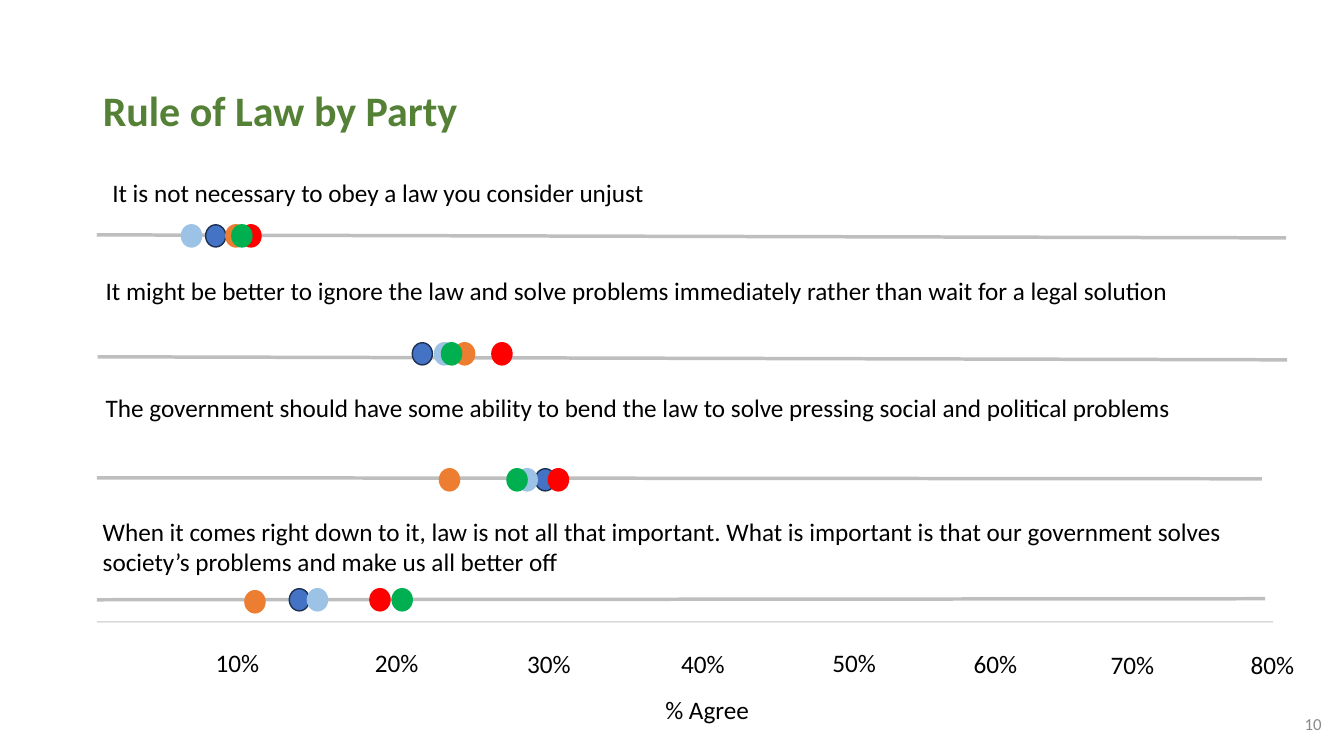
"""Build the Rule of Law by Party dot-plot slide."""
from dataclasses import dataclass

import lxml.etree
import pptx
import pptx.dml.color
import pptx.enum.shapes
import pptx.enum.text
import pptx.oxml.ns
import pptx.util

Pt = pptx.util.Pt
RGBColor = pptx.dml.color.RGBColor
ALIGN = pptx.enum.text.PP_ALIGN
ANCHOR = pptx.enum.text.MSO_ANCHOR

TITLE_GREEN = RGBColor(0x54, 0x81, 0x35)
BLACK = RGBColor(0, 0, 0)
NUMBER_GRAY = RGBColor(0x88, 0x88, 0x88)
LINE_GRAY = RGBColor(0x7F, 0x7F, 0x7F)
BLUE = RGBColor(0x44, 0x72, 0xC4)
NAVY = RGBColor(0x1C, 0x30, 0x52)
RED = RGBColor(0xFF, 0, 0)
ORANGE = RGBColor(0xED, 0x7D, 0x31)
LIGHT_BLUE = RGBColor(0x9C, 0xC2, 0xE5)
GREEN = RGBColor(0, 0xB0, 0x50)

FONT = "Calibri"
PARTIES = [(BLUE, NAVY), (RED, RED), (ORANGE, ORANGE), (LIGHT_BLUE, LIGHT_BLUE), (GREEN, GREEN)]
DOT_WIDTH, DOT_HEIGHT = 14.4, 15.84


@dataclass
class Row:
    """One statement, its scale line and the dots in party order."""
    box: tuple
    statement: str
    line: tuple
    dot_top: float
    dot_lefts: tuple
    orange_drop: float = 0


ROWS = [
    Row((69.12, 123.12, 614.88, 28.8),
        " It is not necessary to obey a law you consider unjust",
        (0, 44.64, 849.6, 46.8), 37.44, (77.76, 102.96, 92.16, 60.48, 96.48)),
    Row((68.4, 192.96, 849.6, 28.8),
        "It might be better to ignore the law and solve problems immediately "
        "rather than wait for a legal solution",
        (1.44, 61.92, 851.04, 64.08), 51.84, (226.08, 282.96, 256.32, 241.92, 246.96)),
    Row((68.4, 276.48, 849.6, 51.12),
        "The government should have some ability to bend the law to solve "
        "pressing social and political problems",
        (0.72, 64.8, 833.04, 65.52), 58.32, (313.92, 323.28, 245.52, 300.96, 293.76)),
    Row((66.24, 365.04, 834.48, 51.12),
        "When it comes right down to it, law is not all that important. What is "
        "important is that our government solves society’s problems and make us all better off",
        (2.88, 63.36, 837.36, 62.64), 55.44, (140.4, 198, 108.72, 153.36, 213.84), 1.44),
]
TICKS = [(77.76, 14.4), (191.52, 14.4), (300.24, 15.12), (410.4, 15.12),
         (518.4, 14.4), (619.2, 15.12), (717.12, 15.84), (817.2, 15.84)]


def format_text(shape, text, size, color, align=None, bold=False):
    """Set the text of a shape and format its runs."""
    shape.text_frame.text = text
    shape.text_frame.word_wrap = True
    for paragraph in shape.text_frame.paragraphs:
        paragraph.alignment = align
        for run in paragraph.runs:
            run.font.name = FONT
            run.font.size = Pt(size)
            run.font.bold = bold
            run.font.color.rgb = color


def add_text(slide, box, text, size=18, color=BLACK, align=None, anchor=ANCHOR.TOP):
    """Add a text box at the given box."""
    shape = slide.shapes.add_textbox(*map(Pt, box))
    format_text(shape, text, size, color, align)
    shape.text_frame.vertical_anchor = anchor


def add_line(slide, ends, width, opacity):
    """Add a translucent grey line."""
    line = slide.shapes.add_connector(
        pptx.enum.shapes.MSO_CONNECTOR.STRAIGHT, *map(Pt, ends))
    line.line.width = Pt(width)
    line.line.color.rgb = LINE_GRAY
    qualified = pptx.oxml.ns.qn
    properties = line._element.spPr
    color = properties.find(".//" + qualified("a:srgbClr"))
    lxml.etree.SubElement(color, qualified("a:alpha")).set("val", str(opacity * 1000))
    lxml.etree.SubElement(properties, qualified("a:effectLst"))


def add_dot(slide, left, top, fill, outline):
    """Add one party dot."""
    dot = slide.shapes.add_shape(
        pptx.enum.shapes.MSO_SHAPE.OVAL, Pt(left), Pt(top), Pt(DOT_WIDTH), Pt(DOT_HEIGHT))
    dot.shadow.inherit = False
    dot.fill.solid()
    dot.fill.fore_color.rgb = fill
    dot.line.color.rgb = outline
    dot.line.width = Pt(1)


def add_title(slide, box):
    """Place and format the slide title."""
    title = slide.shapes.title
    title.left, title.top, title.width, title.height = map(Pt, box)
    format_text(title, "Rule of Law by Party", 30, TITLE_GREEN, ALIGN.LEFT, True)
    title.text_frame.vertical_anchor = ANCHOR.MIDDLE
    title.text_frame.paragraphs[0].line_spacing = 0.9


def add_row(slide, row):
    """Draw a statement with its scale line and dots relative to its box."""
    left, top = row.box[:2]
    start_x, start_y, end_x, end_y = row.line
    add_line(slide, (left + start_x, top + start_y, left + end_x, top + end_y), 2.5, 50)
    for (fill, outline), dot_left in zip(PARTIES, row.dot_lefts):
        drop = row.orange_drop if fill == ORANGE else 0
        add_dot(slide, left + dot_left, top + row.dot_top + drop, fill, outline)
    add_text(slide, row.box, row.statement)


def add_axis(slide, box):
    """Draw the percentage axis, its labels and its caption."""
    left, top, width, height = box
    add_line(slide, (left + width, top, left, top), 0.75, 46)
    for index, (tick_left, tick_top) in enumerate(TICKS, 1):
        add_text(slide, (left + tick_left, top + tick_top, 51.84, 28.8), f"{index * 10}%")
    add_text(slide, (left + 353.52, top + height - 28.8, 164.88, 28.8), "% Agree",
             align=ALIGN.CENTER)


def main():
    """Build and save the presentation."""
    presentation = pptx.Presentation()
    presentation.slide_width, presentation.slide_height = Pt(960), Pt(540)
    slide = presentation.slides.add_slide(presentation.slide_layouts[5])
    add_title(slide, (66.24, 28.8, 828, 104.4))
    for row in ROWS:
        add_row(slide, row)
    add_axis(slide, (69.12, 444.24, 840.24, 77.04))
    add_text(slide, (735.12, 502.56, 216, 28.8), "10", 12, NUMBER_GRAY,
             ALIGN.RIGHT, ANCHOR.MIDDLE)
    presentation.save("out.pptx")


if __name__ == "__main__":
    main()
